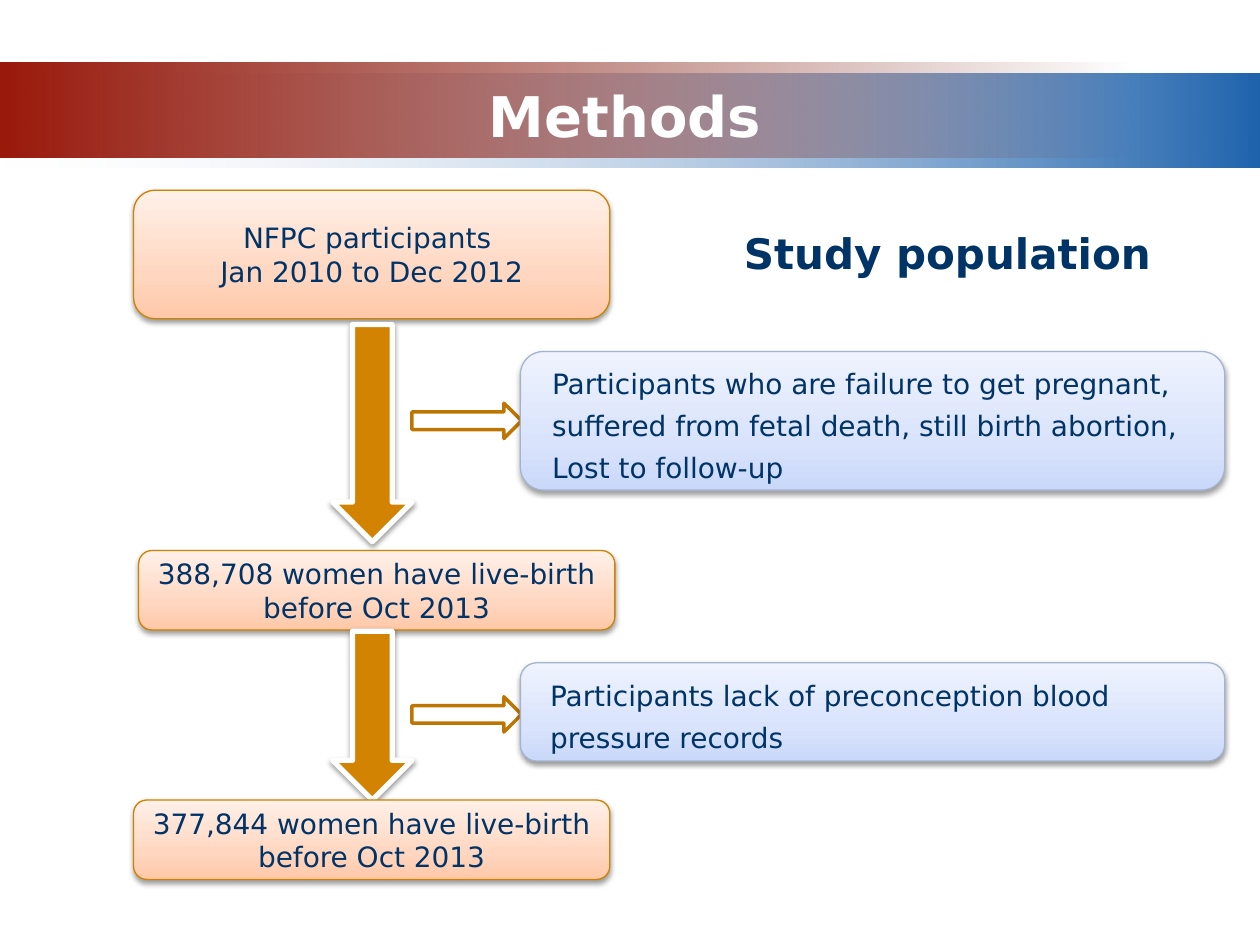
from dataclasses import dataclass
from typing import NamedTuple, Optional

from lxml.etree import SubElement
from pptx import Presentation
from pptx.dml.color import RGBColor
from pptx.enum.shapes import MSO_SHAPE
from pptx.enum.text import MSO_ANCHOR, PP_ALIGN
from pptx.oxml.ns import qn
from pptx.util import Pt


class Stop(NamedTuple):
    position: int
    color: str
    alpha: int = 100


class Frame(NamedTuple):
    left: float
    top: float
    width: float
    height: float


@dataclass(frozen=True)
class Theme:
    font: str = "DejaVu Sans"
    ink: str = "003366"
    white: str = "FFFFFF"
    flow_arrow: str = "D28302"
    side_arrow: str = "BE7602"
    title_size: float = 32
    heading_size: float = 24
    body_size: float = 16
    blue_bar: tuple = (Stop(0, "F1F2F7", 0), Stop(100, "1F63AD"))
    red_bar: tuple = (Stop(0, "99190B"), Stop(100, "6D1208", 0))


@dataclass(frozen=True)
class BoxStyle:
    stops: tuple
    line: str
    align: PP_ALIGN
    indent: float = 0
    spacing: Optional[float] = None


@dataclass(frozen=True)
class Box:
    frame: Frame
    style: BoxStyle
    lines: tuple


@dataclass(frozen=True)
class Arrow:
    kind: MSO_SHAPE
    frame: Frame
    fill: str
    line: str
    line_width: float
    shadow: bool


THEME = Theme()
STAGE = BoxStyle(
    (Stop(0, "FFC8A8"), Stop(35, "FFD7C1"), Stop(100, "FFF0E8")),
    "CF8100", PP_ALIGN.CENTER)
EXCLUSION = BoxStyle(
    (Stop(0, "CAD8FA"), Stop(35, "D9E3FB"), Stop(100, "EFF3FE")),
    "A6B3CF", PP_ALIGN.LEFT, 7.2, 24)


def flow_arrow(top: float, height: float) -> Arrow:
    return Arrow(MSO_SHAPE.DOWN_ARROW, Frame(190.08, top, 45.36, height),
                 THEME.flow_arrow, THEME.white, 3, True)


def side_arrow(top: float) -> Arrow:
    return Arrow(MSO_SHAPE.RIGHT_ARROW, Frame(235.44, top, 62.64, 20.16),
                 THEME.white, THEME.side_arrow, 2, False)


def stage(left: float, top: float, height: float, *lines: str) -> Box:
    return Box(Frame(left, top, 272.16, height), STAGE, lines)


def exclusion(top: float, height: float, *lines: str) -> Box:
    return Box(Frame(297.36, top, 402.48, height), EXCLUSION, lines)


FLOW = (
    stage(76.32, 108.72, 73.44, "NFPC participants ", "Jan 2010 to Dec 2012"),
    flow_arrow(185.4, 124.2),
    side_arrow(230.4),
    exclusion(200.88, 79.2,
              "Participants who are failure to get pregnant, "
              "suffered from fetal death, still birth abortion,",
              "Lost to follow-up"),
    stage(79.2, 314.64, 45.36, "388,708 women have live-birth before Oct 2013"),
    flow_arrow(360.72, 96.48),
    side_arrow(398.16),
    exclusion(378.72, 56.16,
              "Participants lack of preconception blood pressure records"),
    stage(76.32, 457.2, 45.36, "377,844 women have live-birth before Oct 2013"),
)


def place(shape, frame: Frame) -> None:
    shape.left, shape.top, shape.width, shape.height = map(Pt, frame)


def add_shape(page, kind: MSO_SHAPE, frame: Frame):
    shape = page.shapes.add_shape(kind, *map(Pt, frame))
    shape.shadow.inherit = False
    return shape


def add_color(parent, color: str, alpha: int) -> None:
    node = SubElement(parent, qn("a:srgbClr"), val=color)
    if alpha < 100:
        SubElement(node, qn("a:alpha"), val=str(alpha * 1000))


def fill_solid(shape, color: str) -> None:
    shape.fill.solid()
    shape.fill.fore_color.rgb = RGBColor.from_string(color)


def fill_gradient(shape, stops: tuple, angle: int) -> None:
    shape.fill.background()
    properties = shape._element.spPr
    empty = properties.find(qn("a:noFill"))
    gradient = SubElement(properties, qn("a:gradFill"), rotWithShape="1")
    properties.replace(empty, gradient)
    stop_list = SubElement(gradient, qn("a:gsLst"))
    for stop in stops:
        node = SubElement(stop_list, qn("a:gs"), pos=str(stop.position * 1000))
        add_color(node, stop.color, stop.alpha)
    SubElement(gradient, qn("a:lin"), ang=str(angle * 60000), scaled="0")


def draw_line(shape, color: str, width: float) -> None:
    shape.line.color.rgb = RGBColor.from_string(color)
    shape.line.width = Pt(width)


def cast_shadow(shape) -> None:
    effects = shape._element.spPr.find(qn("a:effectLst"))
    shadow = SubElement(effects, qn("a:outerShdw"), blurRad=str(Pt(3.1)),
                        dist=str(Pt(1.6)), dir=str(90 * 60000), rotWithShape="0")
    add_color(shadow, "000000", 38)


def format_paragraph(paragraph, text: str, size: float, color: str,
                     align: PP_ALIGN, bold: bool = False) -> None:
    paragraph.text = text
    paragraph.alignment = align
    paragraph.font.name = THEME.font
    paragraph.font.size = Pt(size)
    paragraph.font.bold = bold
    paragraph.font.color.rgb = RGBColor.from_string(color)


def draw_bar(page, frame: Frame, stops: tuple) -> None:
    bar = add_shape(page, MSO_SHAPE.RECTANGLE, frame)
    fill_gradient(bar, stops, 0)
    bar.line.fill.background()


def draw_title(page, text: str) -> None:
    title = page.shapes.title
    page.shapes._spTree.append(title._element)
    place(title, Frame(66.24, 43.2, 581.76, 44.64))
    title.text_frame.vertical_anchor = MSO_ANCHOR.MIDDLE
    format_paragraph(title.text_frame.paragraphs[0], text, THEME.title_size,
                     THEME.white, PP_ALIGN.CENTER, True)


def draw_box(page, box: Box) -> None:
    style = box.style
    shape = add_shape(page, MSO_SHAPE.ROUNDED_RECTANGLE, box.frame)
    fill_gradient(shape, style.stops, 270)
    draw_line(shape, style.line, 0.75)
    cast_shadow(shape)
    text_frame = shape.text_frame
    text_frame.word_wrap = True
    text_frame.vertical_anchor = MSO_ANCHOR.MIDDLE
    for index, line in enumerate(box.lines):
        paragraph = text_frame.add_paragraph() if index else text_frame.paragraphs[0]
        format_paragraph(paragraph, line, THEME.body_size, THEME.ink, style.align)
        if style.spacing:
            paragraph.line_spacing = Pt(style.spacing)
            paragraph._p.get_or_add_pPr().set("marL", str(Pt(style.indent)))


def draw_arrow(page, arrow: Arrow) -> None:
    shape = add_shape(page, arrow.kind, arrow.frame)
    fill_solid(shape, arrow.fill)
    draw_line(shape, arrow.line, arrow.line_width)
    if arrow.shadow:
        cast_shadow(shape)


def draw_heading(page, text: str) -> None:
    heading = add_shape(page, MSO_SHAPE.RECTANGLE, Frame(405.36, 126.72, 272.16, 36))
    fill_solid(heading, THEME.white)
    draw_line(heading, THEME.white, 2)
    heading.text_frame.word_wrap = True
    heading.text_frame.vertical_anchor = MSO_ANCHOR.TOP
    format_paragraph(heading.text_frame.paragraphs[0], text, THEME.heading_size,
                     THEME.ink, PP_ALIGN.CENTER, True)


def main() -> None:
    deck = Presentation()
    deck.slide_width, deck.slide_height = Pt(720), Pt(540)
    page = deck.slides.add_slide(deck.slide_layouts[5])
    draw_bar(page, Frame(0, 41.76, 720, 54), THEME.blue_bar)
    draw_bar(page, Frame(0, 36, 648, 54), THEME.red_bar)
    draw_title(page, "Methods")
    for part in FLOW:
        if isinstance(part, Box):
            draw_box(page, part)
        else:
            draw_arrow(page, part)
    draw_heading(page, "Study population")
    deck.save("out.pptx")


if __name__ == "__main__":
    main()
